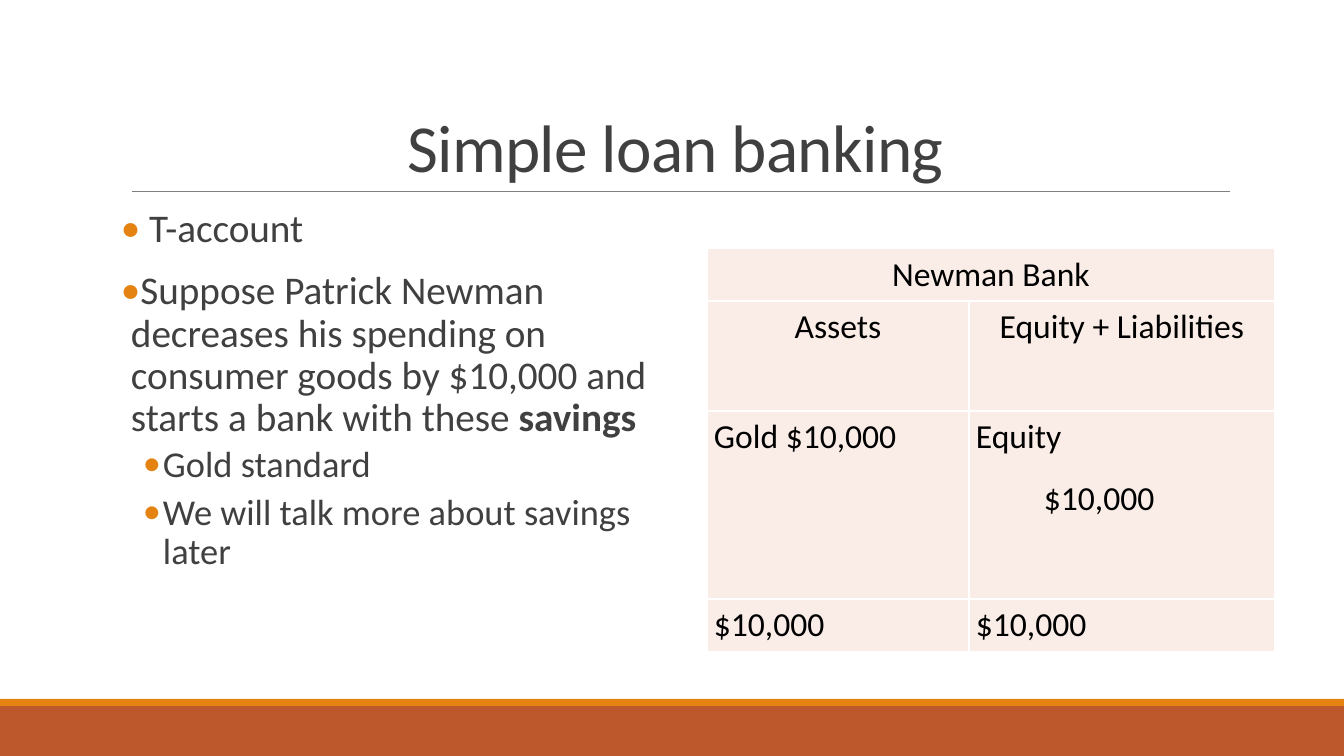
"""Build the simple loan banking slide with its T-account table."""
from lxml import etree
from pptx import Presentation
from pptx.dml.color import RGBColor
from pptx.enum.shapes import MSO_CONNECTOR, MSO_SHAPE
from pptx.enum.text import MSO_ANCHOR, PP_ALIGN
from pptx.oxml.ns import qn
from pptx.util import Emu, Pt

LEFT, CENTER, JUSTIFY = PP_ALIGN.LEFT, PP_ALIGN.CENTER, PP_ALIGN.JUSTIFY
TOP, BOTTOM = MSO_ANCHOR.TOP, MSO_ANCHOR.BOTTOM
RECTANGLE, STRAIGHT = MSO_SHAPE.RECTANGLE, MSO_CONNECTOR.STRAIGHT
PX = 914400 / 100.8

FONT = "Calibri"
INK, BLACK, ORANGE, RUST = "404040", "000000", "E48312", "BD582C"
RULE, CELL, BORDER = "808080", "FAEDE7", "FFFFFF"

TITLE = "Simple loan banking"
POINTS = [
    (0, [(" T-account", False)]),
    (0, [("Suppose Patrick Newman decreases his spending on consumer goods by "
          "$10,000 and starts a bank with these ", False), ("savings", True)]),
    (1, [("Gold standard", False)]),
    (1, [("We will talk more about savings later", False)]),
]
LEVELS = [
    dict(size=28, margin=10, hang=10, before=12, after=2),
    dict(size=26, margin=42, hang=20, before=2, after=4),
]
ACCOUNT = [
    [["Newman Bank"], []],
    [["Assets"], ["Equity + Liabilities"]],
    [["Gold $10,000"], ["Equity", "$10,000"]],
    [["$10,000"], ["$10,000"]],
]
COLUMNS, ROWS = [262, 306], [53, 110, 188, 53]
HEADER_ROWS = 2
AMOUNT_INDENT = 68
BANDS = [(706, 50, RUST), (699, 7, ORANGE)]


def px(length):
    return Emu(round(length * PX))


def color(value):
    return RGBColor.from_string(value)


def write(para, spans, size=24, ink=BLACK, align=LEFT, line=1.15, before=0,
          after=0, margin=0, hang=0, bullet=None, tracking=None):
    """Fill a paragraph with (text, bold) spans in one format."""
    para.alignment, para.line_spacing = align, line
    para.space_before, para.space_after = Pt(before), Pt(after)
    props = para._p.get_or_add_pPr()
    props.set("marL", str(px(margin)))
    props.set("indent", str(px(-hang)))
    if bullet:
        tint = etree.SubElement(props, qn("a:buClr"))
        etree.SubElement(tint, qn("a:srgbClr"), val=ORANGE)
        etree.SubElement(props, qn("a:buFont"), typeface=FONT)
        etree.SubElement(props, qn("a:buChar"), char=bullet)
    for text, bold in spans:
        span = para.add_run()
        span.text = text
        font = span.font
        font.name, font.size, font.bold = FONT, Pt(size), bold
        font.color.rgb = color(ink)
        if tracking is not None:
            span._r.get_or_add_rPr().set("spc", str(tracking))


def paragraphs(frame, count):
    for _ in range(count - 1):
        frame.add_paragraph()
    return frame.paragraphs


def add_box(page, area, anchor, side):
    frame = page.shapes.add_textbox(*map(px, area)).text_frame
    frame.word_wrap, frame.vertical_anchor = True, anchor
    frame.margin_left = frame.margin_right = px(side)
    frame.margin_top = frame.margin_bottom = px(5)
    return frame


def style_cell(cell):
    cell.margin_left = cell.margin_right = px(7)
    cell.margin_top = cell.margin_bottom = 0
    cell.fill.solid()
    cell.fill.fore_color.rgb = color(CELL)
    props = cell._tc.get_or_add_tcPr()
    for place, side in enumerate(("lnL", "lnR", "lnT", "lnB")):
        edge = etree.Element(qn(f"a:{side}"), w=str(Pt(1)))
        fill = etree.SubElement(edge, qn("a:solidFill"))
        etree.SubElement(fill, qn("a:srgbClr"), val=BORDER)
        props.insert(place, edge)


def add_background(page):
    for top, height, fill in BANDS:
        band = page.shapes.add_shape(RECTANGLE, *map(px, (0, top, 1344, height)))
        band.shadow.inherit = False
        band.fill.solid()
        band.fill.fore_color.rgb = color(fill)
        band.line.fill.background()
    rule = page.shapes.add_connector(STRAIGHT, *map(px, (132, 191, 1230, 191)))
    rule.line.color.rgb, rule.line.width = color(RULE), Pt(0.5)
    etree.SubElement(rule._element.spPr, qn("a:effectLst"))


def add_account(page):
    area = (707, 248, sum(COLUMNS), sum(ROWS))
    table = page.shapes.add_table(len(ROWS), len(COLUMNS), *map(px, area)).table
    for column, width in zip(table.columns, COLUMNS):
        column.width = px(width)
    for row, height in zip(table.rows, ROWS):
        row.height = px(height)
    table.cell(0, 0).merge(table.cell(0, 1))
    for r, row in enumerate(ACCOUNT):
        for c, lines in enumerate(row):
            cell = table.cell(r, c)
            style_cell(cell)
            paras = paragraphs(cell.text_frame, len(lines))
            for i, (para, text) in enumerate(zip(paras, lines)):
                write(para, [(text, False)], after=0 if r == 1 else 10,
                      align=CENTER if r < HEADER_ROWS else JUSTIFY,
                      margin=AMOUNT_INDENT * i)


def main():
    deck = Presentation()
    deck.slide_width, deck.slide_height = px(1344), px(756)
    page = deck.slides.add_slide(deck.slide_layouts[6])
    add_background(page)
    title = add_box(page, (121, 31, 1109, 160), BOTTOM, 10)
    write(title.paragraphs[0], [(TITLE, False)], size=48, ink=INK,
          align=CENTER, line=0.85, tracking=-50)
    body = add_box(page, (121, 204, 551, 450), TOP, 0)
    for para, (level, spans) in zip(paragraphs(body, len(POINTS)), POINTS):
        para.level = level
        write(para, spans, ink=INK, line=0.9, bullet="•", **LEVELS[level])
    add_account(page)
    deck.save("out.pptx")


if __name__ == "__main__":
    main()
